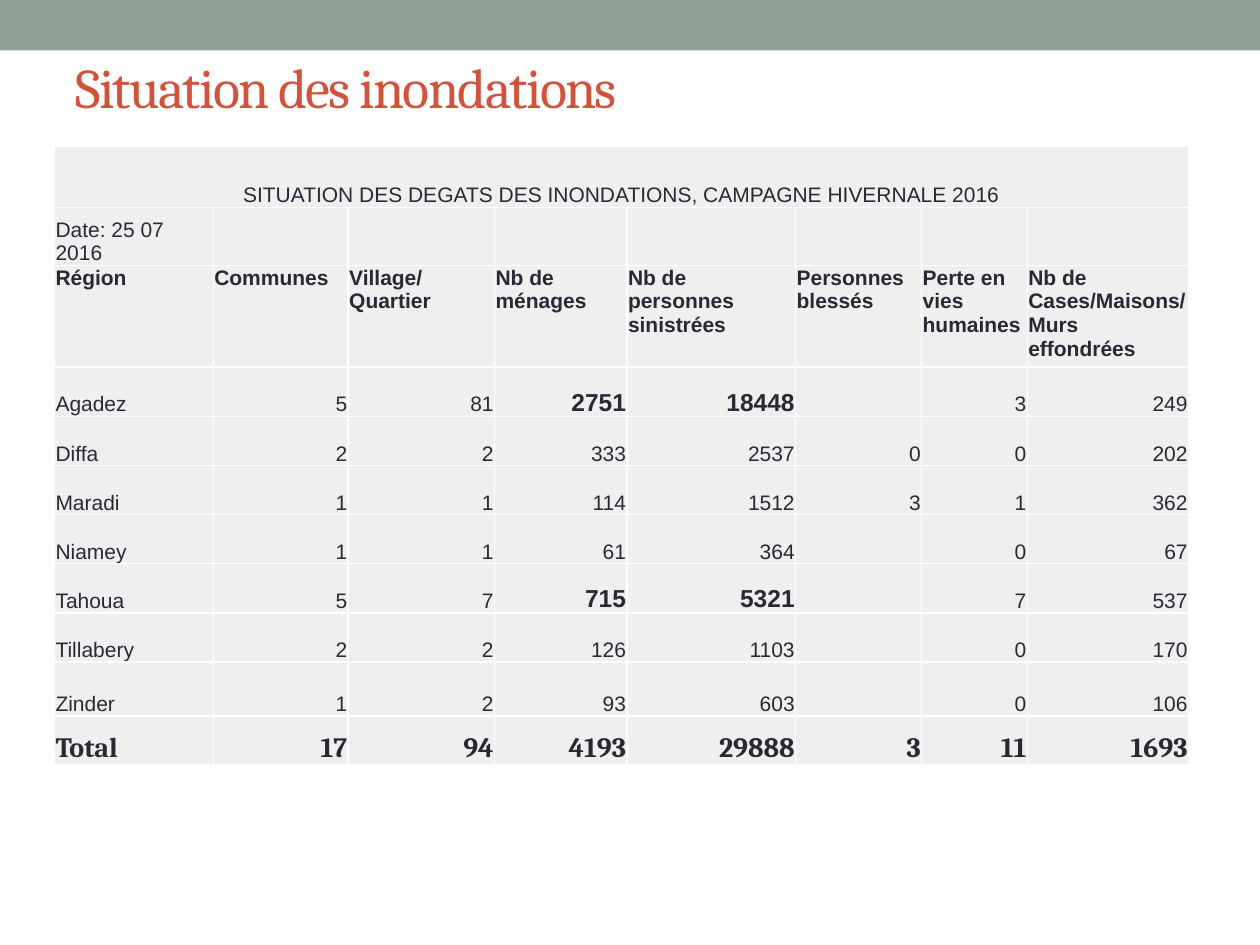
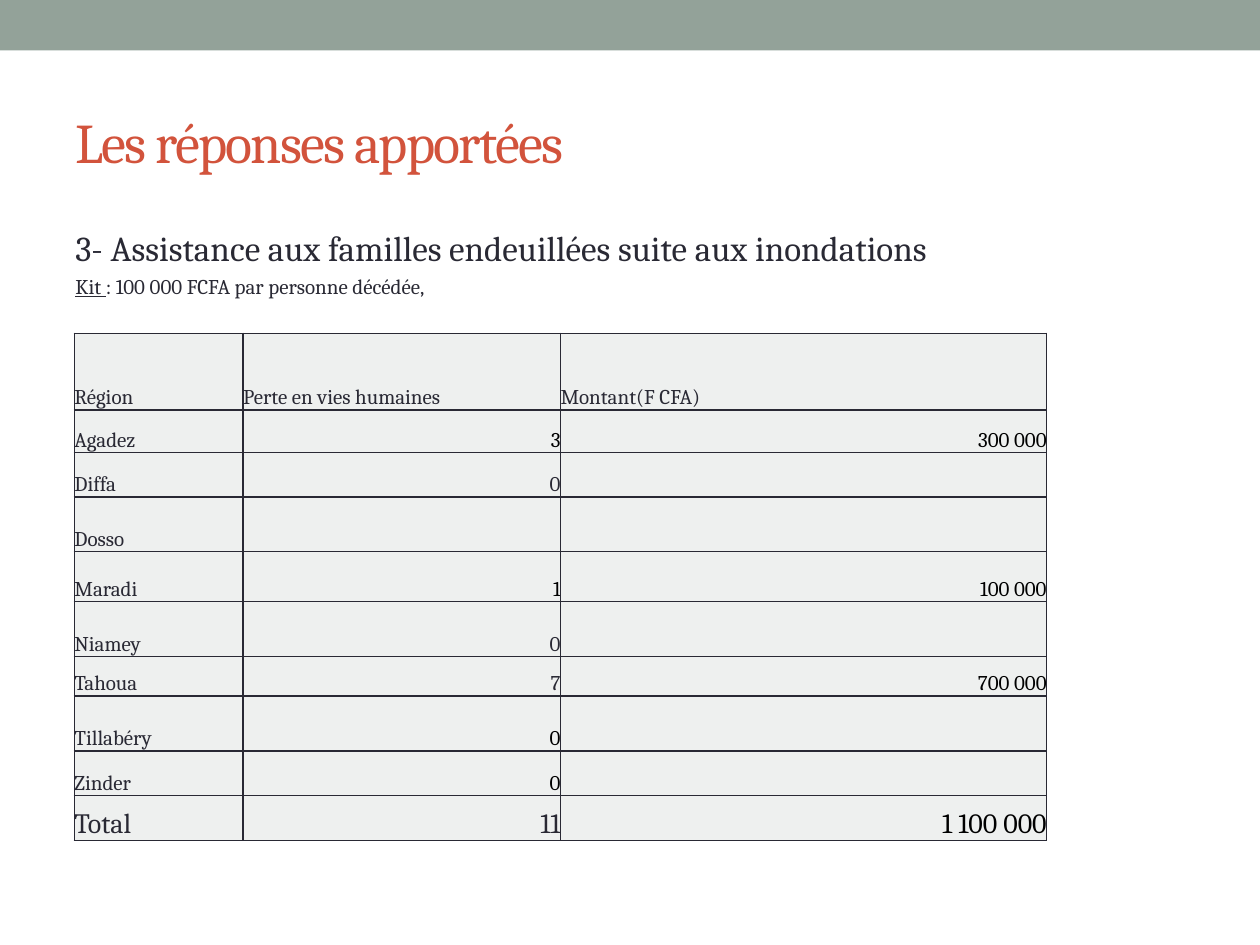
from dataclasses import dataclass

from lxml.etree import SubElement
from pptx import Presentation
from pptx.dml.color import RGBColor as Rgb
from pptx.enum.shapes import MSO_SHAPE as Shape
from pptx.enum.text import MSO_ANCHOR as Anchor, PP_ALIGN as Align
from pptx.oxml.ns import qn
from pptx.util import Cm, Pt


@dataclass(frozen=True)
class Theme:
    """Colours, fonts and type sizes of the deck."""
    band: Rgb = Rgb.from_string("93A299")
    title: Rgb = Rgb.from_string("D2533C")
    ink: Rgb = Rgb.from_string("292934")
    black: Rgb = Rgb.from_string("000000")
    white: Rgb = Rgb.from_string("FFFFFF")
    cell: Rgb = Rgb.from_string("EEF0EF")
    serif: str = "Cambria"
    sans: str = "Arial"
    title_size: int = 32
    lead_size: int = 20
    total_size: int = 16
    strong_size: int = 14
    text_size: int = 12


@dataclass(frozen=True)
class Box:
    """A region in centimetres."""
    left: float
    top: float
    width: float
    height: float

    def lengths(self):
        """Return left, top, width and height as lengths."""
        return Cm(self.left), Cm(self.top), Cm(self.width), Cm(self.height)


THEME = Theme()
PAGE = Box(0, 0, 25.4, 19.05)

DAMAGE_TITLE = "SITUATION DES DEGATS DES INONDATIONS, CAMPAGNE HIVERNALE 2016"
DAMAGE_DATE = "Date: 25 07 2016"
DAMAGE_HEADINGS = [
    "Région", "Communes", "Village/Quartier", "Nb de ménages",
    "Nb de personnes sinistrées", "Personnes blessés",
    "Perte en vies humaines", "Nb de Cases/Maisons/Murs effondrées",
]
DAMAGE_REGIONS = [
    ["Agadez", "5", "81", "2751", "18448", "", "3", "249"],
    ["Diffa", "2", "2", "333", "2537", "0", "0", "202"],
    ["Maradi", "1", "1", "114", "1512", "3", "1", "362"],
    ["Niamey", "1", "1", "61", "364", "", "0", "67"],
    ["Tahoua", "5", "7", "715", "5321", "", "7", "537"],
    ["Tillabery", "2", "2", "126", "1103", "", "0", "170"],
    ["Zinder", "1", "2", "93", "603", "", "0", "106"],
]
DAMAGE_TOTAL = ["Total", "17", "94", "4193", "29888", "3", "11", "1693"]
DAMAGE_WIDTHS = [3.2, 2.72, 2.95, 2.67, 3.4, 2.54, 2.13, 3.25]
DAMAGE_HEIGHTS = [1.24, 1.17, 1.19] + [0.99] * 6 + [1.09, 0.98]
HARDEST_HIT = {"Agadez", "Tahoua"}

AID_ROWS = [
    ["Région", "Perte en vies humaines", "Montant(F CFA)"],
    ["Agadez", "3", "300 000"],
    ["Diffa", "0", ""],
    ["Dosso", "", ""],
    ["Maradi", "1", "100 000"],
    ["Niamey", "0", ""],
    ["Tahoua", "7", "700 000"],
    ["Tillabéry", "0", ""],
    ["Zinder", "0", ""],
    ["Total", "11", "1 100 000"],
]
AID_WIDTHS = [3.4, 6.4, 9.8]
AID_HEIGHTS = [1.55, 0.85, 0.9, 1.1, 1.01, 1.1, 0.8, 1.11, 0.9, 0.9]
BLACK_COUNTS = {"Agadez", "Maradi", "Tillabéry", "Zinder"}


def write(paragraph, text, size=THEME.text_size, font=THEME.serif,
          color=THEME.ink, bold=False, underline=False, align=Align.LEFT,
          tracking=0, before=0):
    """Add a formatted run to a paragraph."""
    paragraph.alignment = align
    paragraph.space_before = Pt(before)
    run = paragraph.add_run()
    run.text = text
    run.font.size = Pt(size)
    run.font.name = font
    run.font.color.rgb = color
    run.font.bold = bold
    run.font.underline = underline
    if tracking:
        run.font._element.set("spc", str(tracking * 100))


def add_frame(slide, box, anchor=Anchor.TOP):
    """Add a wrapping text frame that fills the box."""
    frame = slide.shapes.add_textbox(*box.lengths()).text_frame
    frame.word_wrap = True
    frame.vertical_anchor = anchor
    return frame


def add_titled_slide(deck, title, box):
    """Add a slide with the top band and a title in the box."""
    slide = deck.slides.add_slide(deck.slide_layouts[6])
    band = slide.shapes.add_shape(
        Shape.RECTANGLE, *Box(0, 0, PAGE.width, 1.02).lengths())
    band.shadow.inherit = False
    band.fill.solid()
    band.fill.fore_color.rgb = THEME.band
    band.line.fill.background()
    frame = add_frame(slide, box, Anchor.MIDDLE)
    write(frame.paragraphs[0], title, size=THEME.title_size,
          color=THEME.title, tracking=-1)
    return slide


def style_cell(cell, border, inset):
    """Give a cell its insets, thin borders and fill."""
    cell.margin_left = cell.margin_right = cell.margin_top = Cm(inset)
    cell.margin_bottom = 0
    cell.vertical_anchor = Anchor.BOTTOM
    properties = cell._tc.get_or_add_tcPr()
    for side in ("a:lnL", "a:lnR", "a:lnT", "a:lnB"):
        edge = SubElement(properties, qn(side), w=str(Pt(1)))
        paint = SubElement(edge, qn("a:solidFill"))
        SubElement(paint, qn("a:srgbClr"), val=str(border))
    cell.fill.solid()
    cell.fill.fore_color.rgb = THEME.cell


def add_grid(slide, box, widths, heights, border, inset=0):
    """Add an empty styled table at the box."""
    grid = slide.shapes.add_table(
        len(heights), len(widths), *box.lengths()).table
    grid.first_row = grid.horz_banding = False
    for column, width in zip(grid.columns, widths):
        column.width = Cm(width)
    for row, height in zip(grid.rows, heights):
        row.height = Cm(height)
    for cell in grid.iter_cells():
        style_cell(cell, border, inset)
    return grid


def fill_row(grid, index, texts, formats):
    """Write one table row, with a format for each cell."""
    for column, (text, style) in enumerate(zip(texts, formats)):
        paragraph = grid.cell(index, column).text_frame.paragraphs[0]
        write(paragraph, text, **style)


def region_formats(region):
    """Return the damage table formats for the row of a region."""
    label = dict(font=THEME.sans)
    number = dict(label, align=Align.RIGHT)
    strong = dict(number, size=THEME.strong_size, bold=True)
    key = strong if region in HARDEST_HIT else number
    return [label, number, number, key, key, number, number, number]


def add_damage_table(slide, box):
    """Add the flood damage table by region."""
    grid = add_grid(slide, box, DAMAGE_WIDTHS, DAMAGE_HEIGHTS,
                    THEME.white, inset=0.02)
    count = len(DAMAGE_WIDTHS)
    grid.cell(0, 0).merge(grid.cell(0, count - 1))
    sans = dict(font=THEME.sans)
    fill_row(grid, 0, [DAMAGE_TITLE], [dict(sans, align=Align.CENTER)])
    fill_row(grid, 1, [DAMAGE_DATE] + [""] * (count - 1), [sans] * count)
    fill_row(grid, 2, DAMAGE_HEADINGS, [dict(sans, bold=True)] * count)
    for column in range(count):
        grid.cell(2, column).vertical_anchor = Anchor.TOP
    for index, texts in enumerate(DAMAGE_REGIONS, start=3):
        fill_row(grid, index, texts, region_formats(texts[0]))
    total = dict(size=THEME.total_size, bold=True)
    fill_row(grid, len(DAMAGE_HEIGHTS) - 1, DAMAGE_TOTAL,
             [total] + [dict(total, align=Align.RIGHT)] * (count - 1))


def aid_formats(region):
    """Return the aid table formats for the row of a region."""
    if region == "Région":
        return [{}] * len(AID_WIDTHS)
    size = THEME.total_size if region == "Total" else THEME.text_size
    label = dict(size=size)
    number = dict(label, align=Align.RIGHT)
    amount = dict(number, color=THEME.black)
    return [label, amount if region in BLACK_COUNTS else number, amount]


def add_aid_table(slide, box):
    """Add the table of payments to bereaved families."""
    grid = add_grid(slide, box, AID_WIDTHS, AID_HEIGHTS, THEME.ink)
    for index, texts in enumerate(AID_ROWS):
        fill_row(grid, index, texts, aid_formats(texts[0]))


def add_aid_intro(slide, box):
    """Add the heading and the content of the aid kit."""
    frame = add_frame(slide, box)
    write(frame.paragraphs[0],
          "3- Assistance aux familles endeuillées suite aux inondations",
          size=THEME.lead_size, before=4)
    kit = frame.add_paragraph()
    write(kit, "Kit ", underline=True)
    write(kit, ": 100 000 FCFA par personne décédée,", before=2.4)


def build_damage_slide(deck):
    """Build the slide on the flood situation."""
    slide = add_titled_slide(deck, "Situation des inondations",
                             Box(1.27, 0.76, 22.86, 1.96))
    add_damage_table(slide, Box(1.1, 2.94, sum(DAMAGE_WIDTHS),
                                sum(DAMAGE_HEIGHTS)))


def build_aid_slide(deck):
    """Build the slide on the responses provided."""
    slide = add_titled_slide(deck, "Les réponses apportées",
                             Box(1.27, 1.47, 22.86, 2.74))
    add_aid_intro(slide, Box(1.27, 4.45, 22.86, 13.54))
    add_aid_table(slide, Box(1.5, 6.72, sum(AID_WIDTHS), sum(AID_HEIGHTS)))


def main():
    """Build and save the deck."""
    deck = Presentation()
    deck.slide_width, deck.slide_height = Cm(PAGE.width), Cm(PAGE.height)
    build_damage_slide(deck)
    build_aid_slide(deck)
    deck.save("out.pptx")


if __name__ == "__main__":
    main()
